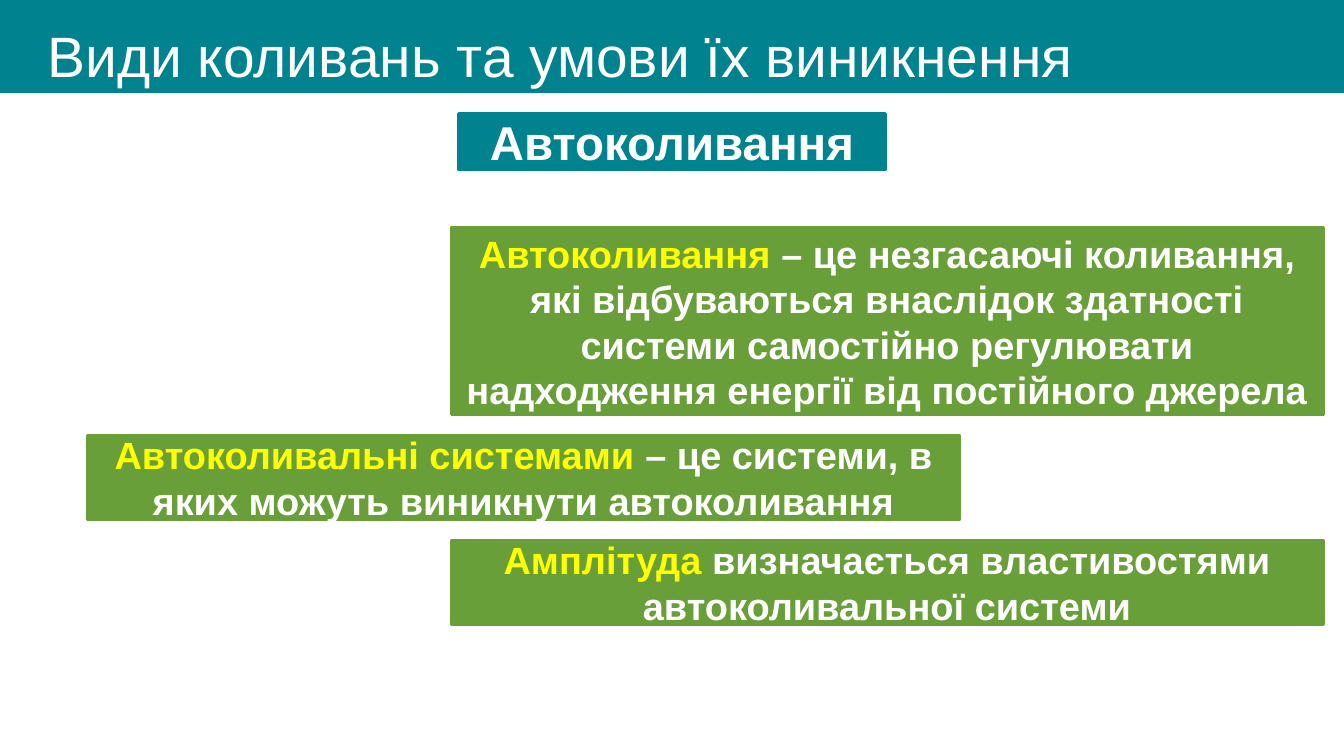
from pptx import Presentation
from pptx.dml.color import RGBColor
from pptx.enum.shapes import MSO_SHAPE
from pptx.enum.text import MSO_ANCHOR, PP_ALIGN
from pptx.util import Cm, Pt

TITLE = "Види коливань та умови їх виникнення"
HEADING = "Автоколивання"
RIGHT_X, LEFT_X = 13.44, 2.62
STATEMENTS = [
    ("Автоколивання ",
     "– це незгасаючі коливання, які відбуваються внаслідок здатності системи "
     "самостійно регулювати надходження енергії від постійного джерела",
     RIGHT_X, 5.56),
    ("Автоколивальні системами ",
     "– це системи, в яких можуть виникнути автоколивання", LEFT_X, 2.49),
    ("Амплітуда ",
     "визначається властивостями автоколивальної системи", RIGHT_X, 2.49),
]

TEAL = RGBColor(0x00, 0x83, 0x8F)
GREEN = RGBColor(0x68, 0x9F, 0x38)
YELLOW = RGBColor(0xFF, 0xFF, 0x00)
WHITE = RGBColor(0xFF, 0xFF, 0xFF)
FONT = "Arial"

SLIDE_W, SLIDE_H = 40, 22.5
BAND_H = 2.74
HEADING_W = 12.67
STATEMENT_W = 25.93
STATEMENT_TOP, GAP = 6.78, 0.63


def add_box(slide, x, y, w, h, color, line_width):
    sp = slide.shapes.add_shape(MSO_SHAPE.RECTANGLE, Cm(x), Cm(y), Cm(w), Cm(h))
    sp.shadow.inherit = False
    sp.fill.solid()
    sp.fill.fore_color.rgb = color
    sp.line.color.rgb = color
    sp.line.width = Pt(line_width)
    return sp


def write(sp, parts, size, bold=True, align=PP_ALIGN.CENTER):
    tf = sp.text_frame
    tf.word_wrap = True
    tf.vertical_anchor = MSO_ANCHOR.MIDDLE
    p = tf.paragraphs[0]
    p.alignment = align
    p.font.name = FONT
    p.font.size = Pt(size)
    p.font.bold = bold
    for text, color in parts:
        r = p.add_run()
        r.text = text
        r.font.color.rgb = color
    return p


prs = Presentation()
prs.slide_width, prs.slide_height = Cm(SLIDE_W), Cm(SLIDE_H)
slide = prs.slides.add_slide(prs.slide_layouts[6])

add_box(slide, 0, 0, SLIDE_W, BAND_H, TEAL, 1)
title = slide.shapes.add_textbox(Cm(1.17), Cm(0.76), Cm(34.49), Cm(1.98))
p = write(title, [(TITLE, WHITE)], 48, bold=False, align=PP_ALIGN.LEFT)
p.line_spacing = 0.9

heading = add_box(slide, (SLIDE_W - HEADING_W) / 2, 3.4, HEADING_W, 1.65, TEAL, 3)
write(heading, [(HEADING, WHITE)], 40)

y = STATEMENT_TOP
for term, text, x, h in STATEMENTS:
    sp = add_box(slide, x, y, STATEMENT_W, h, GREEN, 3)
    write(sp, [(term, YELLOW), (text, WHITE)], 32)
    y += h + GAP

prs.save("out.pptx")
